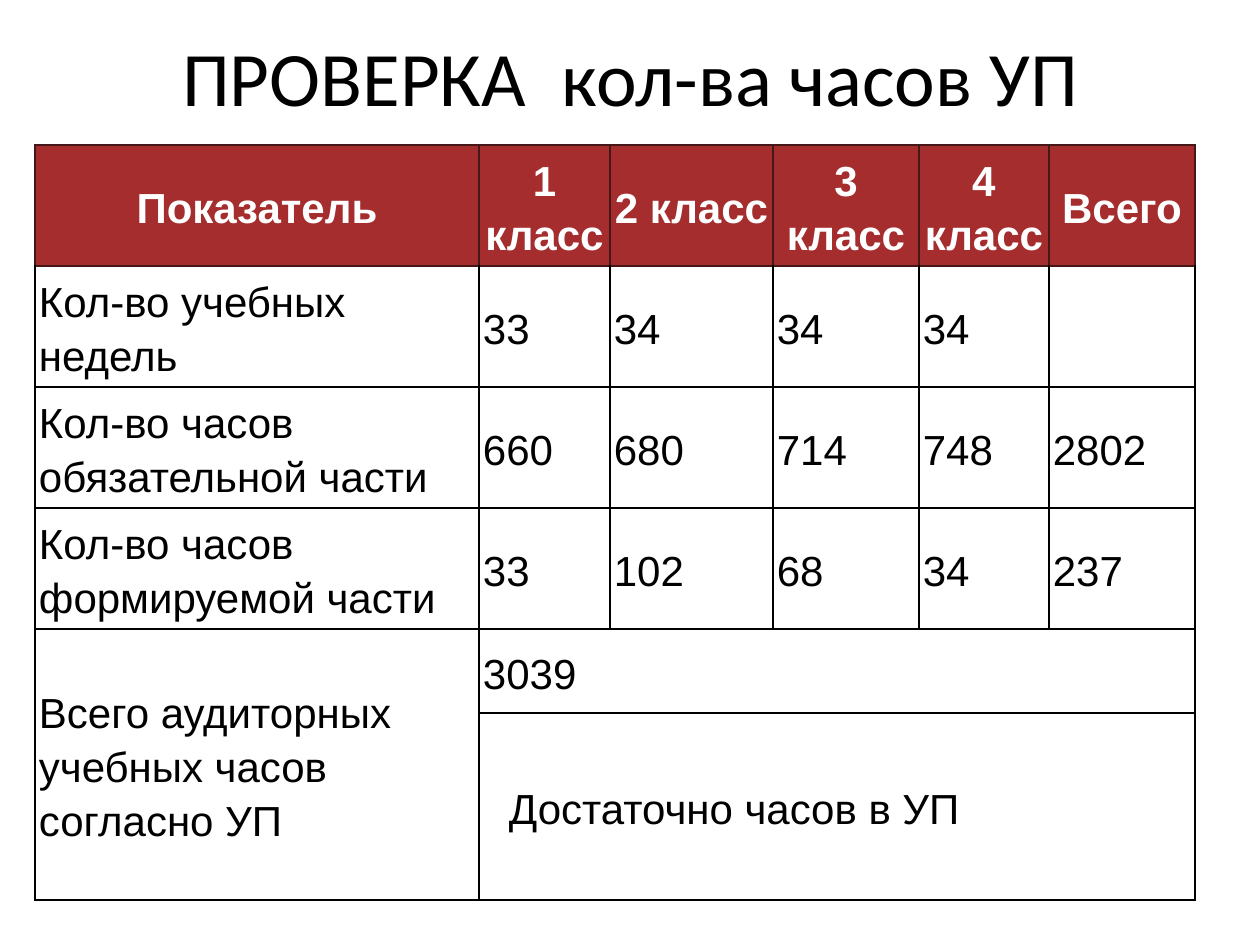
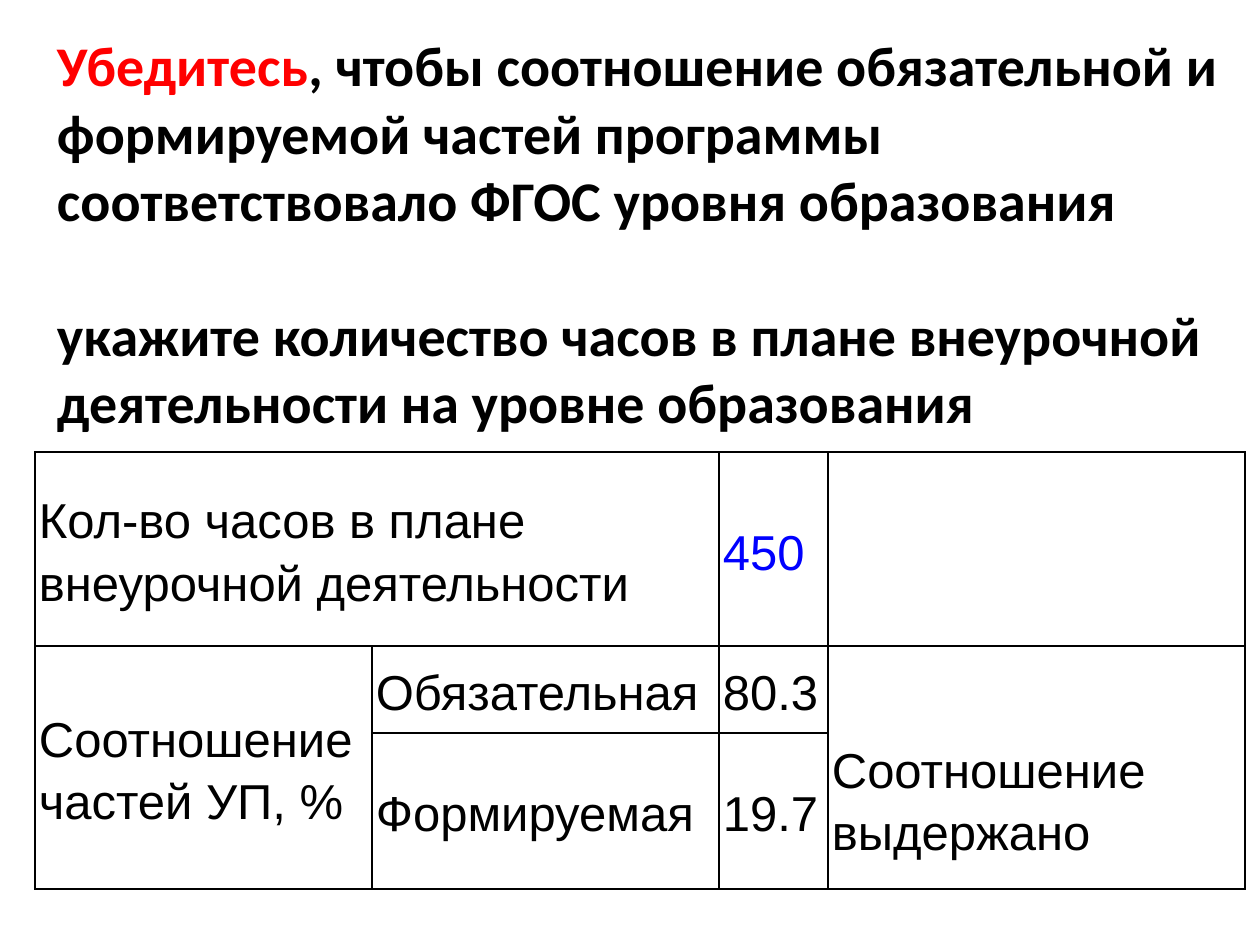
"""Build two slides that check the hours of a school curriculum."""
from dataclasses import dataclass
from itertools import product

from lxml import etree
from pptx import Presentation
from pptx.dml.color import RGBColor
from pptx.enum.text import MSO_ANCHOR, PP_ALIGN
from pptx.oxml.ns import qn
from pptx.util import Emu, Pt

EMU_PER_PX = 914400 / 126
LEFT, CENTER = PP_ALIGN.LEFT, PP_ALIGN.CENTER
MIDDLE = MSO_ANCHOR.MIDDLE


@dataclass(frozen=True)
class Theme:
    """Colours, fonts and sizes shared by the slides."""

    ink: str = "000000"
    paper: str = "FFFFFF"
    header: str = "A52D2E"
    header_line: str = "461718"
    alert: str = "FF0000"
    entry: str = "0000FF"
    title_font: str = "Calibri"
    table_font: str = "Arial"
    title_size: int = 44
    message_size: int = 32
    hours_size: int = 24
    ratio_size: int = 28
    line_spacing: float = 1.15
    border_width: int = 1
    cell_side_inset: int = 4
    cell_end_inset: int = 2
    title_inset: int = 13


THEME = Theme()


@dataclass(frozen=True)
class Box:
    """A rectangle in px."""

    left: int
    top: int
    width: int
    height: int


@dataclass(frozen=True)
class Run:
    """A piece of text in one colour, with letter spacing in points."""

    text: str
    color: str = THEME.ink
    tracking: int = 0


@dataclass(frozen=True)
class Cell:
    """A table cell with its place, span and extra insets in px."""

    row: int
    col: int
    text: str
    color: str = THEME.ink
    rows: int = 1
    cols: int = 1
    indent: int = 0
    drop: int = 0


@dataclass(frozen=True)
class Grid:
    """A table with its origin, column widths and row heights in px."""

    left: int
    top: int
    widths: tuple[int, ...]
    heights: tuple[int, ...]
    size: int
    cells: tuple[Cell, ...]
    header: bool = False


HOURS_ROWS = (
    ("Показатель", "1 класс", "2 класс", "3 класс", "4 класс", "Всего"),
    ("Кол-во учебных недель", "33", "34", "34", "34", ""),
    ("Кол-во часов обязательной части", "660", "680", "714", "748", "2802"),
    ("Кол-во часов формируемой части", "33", "102", "68", "34", "237"),
)

HOURS = Grid(
    35, 145, (444, 131, 163, 146, 130, 146), (121, 121, 121, 121, 84, 187), THEME.hours_size,
    tuple(
        Cell(row, col, text, THEME.ink if row else THEME.paper)
        for row, texts in enumerate(HOURS_ROWS)
        for col, text in enumerate(texts)
    ) + (
        Cell(4, 0, "Всего аудиторных учебных часов согласно УП", rows=2),
        Cell(4, 1, "3039", cols=5),
        Cell(5, 1, "Достаточно часов в УП", cols=5, indent=26),
    ),
    header=True,
)

RATIO = Grid(
    35, 452, (337, 347, 109, 417), (194, 87, 156), THEME.ratio_size,
    (
        Cell(0, 0, "Кол-во часов в плане внеурочной деятельности", cols=2),
        Cell(0, 2, "450", THEME.entry),
        Cell(1, 0, "Соотношение частей УП, %", rows=2),
        Cell(1, 1, "Обязательная"),
        Cell(1, 2, "80.3"),
        Cell(1, 3, "Соотношение выдержано", rows=2, drop=62),
        Cell(2, 1, "Формируемая"),
        Cell(2, 2, "19.7"),
    ),
)

HOURS_TITLE = ((Run("ПРОВЕРКА"), Run(" ", tracking=10), Run("кол-ва часов УП")),)

MESSAGE = (
    (
        Run("Убедитесь", THEME.alert),
        Run(", чтобы соотношение обязательной и формируемой частей программы "
            "соответствовало ФГОС уровня образования"),
    ),
    (Run("укажите количество часов в плане внеурочной деятельности на уровне образования"),),
)


def px(value: int) -> Emu:
    """Turn px into EMU."""
    return Emu(round(value * EMU_PER_PX))


def write(tf, paragraphs, *, font: str, size: int, bold: bool = False,
          align=LEFT, spacing: float = 1.0, gap: int = 0) -> None:
    """Fill a text frame with paragraphs of runs in one format."""
    tf.word_wrap = True
    for i, runs in enumerate(paragraphs):
        p = tf.add_paragraph() if i else tf.paragraphs[0]
        p.alignment = align
        p.line_spacing = spacing
        if i:
            p.space_before = Pt(gap)
        for run in runs:
            r = p.add_run()
            r.text = run.text
            r.font.name = font
            r.font.size = Pt(size)
            r.font.bold = bold
            r.font.color.rgb = RGBColor.from_string(run.color)
            if run.tracking:
                r._r.get_or_add_rPr().set("spc", str(run.tracking * 100))


def add_title(s, box: Box, paragraphs, **text_format) -> None:
    """Add a title box centred vertically."""
    sp = s.shapes.add_textbox(px(box.left), px(box.top), px(box.width), px(box.height))
    tf = sp.text_frame
    tf.vertical_anchor = MIDDLE
    tf.margin_left = tf.margin_right = px(THEME.title_inset)
    tf.margin_top = tf.margin_bottom = 0
    write(tf, paragraphs, font=THEME.title_font, **text_format)


def set_borders(cell, color: str, top_color: str) -> None:
    """Draw the four borders of a cell."""
    tc_pr = cell._tc.get_or_add_tcPr()
    for i, side in enumerate("LRTB"):
        ln = etree.Element(qn(f"a:ln{side}"), w=str(Pt(THEME.border_width)))
        fill = etree.SubElement(ln, qn("a:solidFill"))
        etree.SubElement(fill, qn("a:srgbClr"), val=top_color if side == "T" else color)
        tc_pr.insert(i, ln)


def add_grid(s, grid: Grid) -> None:
    """Add a table with its fills, borders, spans and text."""
    n_rows, n_cols = len(grid.heights), len(grid.widths)
    table = s.shapes.add_table(n_rows, n_cols, px(grid.left), px(grid.top),
                               px(sum(grid.widths)), px(sum(grid.heights))).table
    table.first_row = table.horz_banding = False
    for column, width in zip(table.columns, grid.widths):
        column.width = px(width)
    for row, height in zip(table.rows, grid.heights):
        row.height = px(height)
    for i, j in product(range(n_rows), range(n_cols)):
        cell = table.cell(i, j)
        in_header = grid.header and i == 0
        cell.fill.solid()
        cell.fill.fore_color.rgb = RGBColor.from_string(THEME.header if in_header else THEME.paper)
        set_borders(cell, THEME.header_line if in_header else THEME.ink,
                    THEME.header_line if grid.header and i < 2 else THEME.ink)
    for item in grid.cells:
        cell = table.cell(item.row, item.col)
        if item.rows > 1 or item.cols > 1:
            cell.merge(table.cell(item.row + item.rows - 1, item.col + item.cols - 1))
        cell.vertical_anchor = MIDDLE
        cell.margin_right = px(THEME.cell_side_inset)
        cell.margin_bottom = px(THEME.cell_end_inset)
        cell.margin_left = px(THEME.cell_side_inset + item.indent)
        cell.margin_top = px(THEME.cell_end_inset + item.drop)
        if item.text:
            in_header = grid.header and item.row == 0
            write(cell.text_frame, [[Run(item.text, item.color)]], font=THEME.table_font,
                  size=grid.size, bold=in_header, align=CENTER if in_header else LEFT,
                  spacing=THEME.line_spacing)


def main() -> None:
    """Build both slides and save the file."""
    prs = Presentation()
    prs.slide_width, prs.slide_height = px(1260), px(945)
    blank = prs.slide_layouts[6]

    s = prs.slides.add_slide(blank)
    add_title(s, Box(25, 17, 1211, 118), HOURS_TITLE, size=THEME.title_size, align=CENTER)
    add_grid(s, HOURS)

    s = prs.slides.add_slide(blank)
    add_title(s, Box(44, 31, 1191, 404), MESSAGE, size=THEME.message_size, bold=True, gap=39)
    add_grid(s, RATIO)

    prs.save("out.pptx")


if __name__ == "__main__":
    main()
